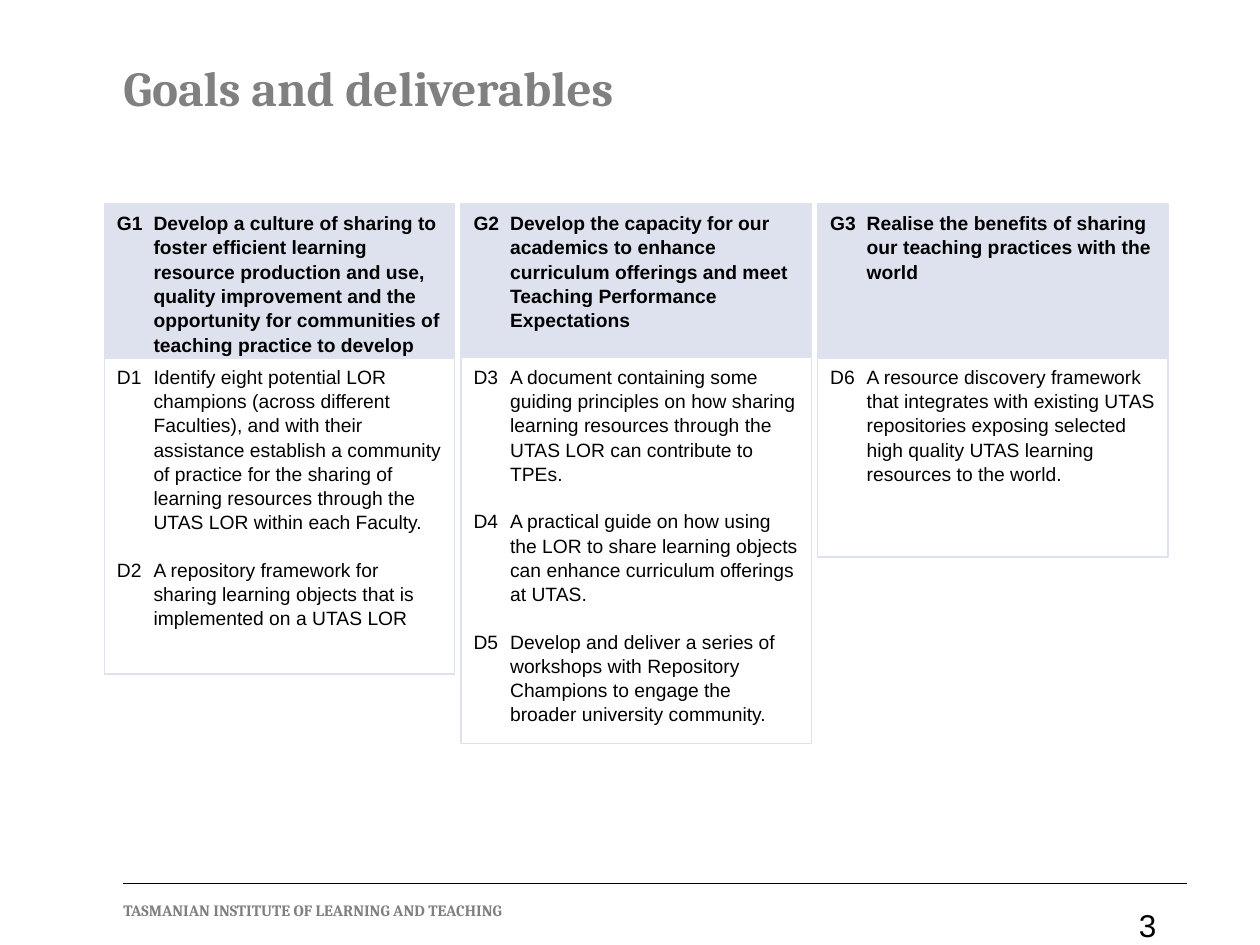
from dataclasses import dataclass

from lxml.etree import SubElement
from pptx import Presentation
from pptx.dml.color import RGBColor
from pptx.enum.shapes import MSO_CONNECTOR, MSO_SHAPE
from pptx.enum.text import MSO_ANCHOR, PP_ALIGN
from pptx.oxml.ns import qn
from pptx.shapes.autoshape import Shape
from pptx.shapes.group import GroupShape
from pptx.slide import Slide
from pptx.text.text import Font, TextFrame
from pptx.util import Inches, Pt

BLACK, GREY, LAVENDER = "000000", "808080", "DEE1EE"
COLUMN_LEFT, COLUMN_PITCH, COLUMN_WIDTH = 0.83, 2.83, 2.78
GOAL_TOP, GOAL_HEIGHT, DELIVERABLES_TOP = 1.62, 1.21, 2.84
HANGING_INDENT = 0.29


@dataclass(frozen=True)
class Item:
    code: str
    wording: str


@dataclass(frozen=True)
class Column:
    goal: Item
    deliverables: tuple[Item, ...]
    deliverables_height: float


COLUMNS = (
    Column(
        Item("G1", "Develop a culture of sharing to foster efficient learning resource production and use, "
             "quality improvement and the opportunity for communities of teaching practice to develop"),
        (
            Item("D1", "Identify eight potential LOR champions (across different Faculties), and with their "
                 "assistance establish a community of practice for the sharing of learning resources "
                 "through the UTAS LOR within each Faculty."),
            Item("D2", "A repository framework for sharing learning objects that is implemented on a UTAS LOR"),
        ),
        2.51,
    ),
    Column(
        Item("G2", "Develop the capacity for our academics to enhance curriculum offerings and meet "
             "Teaching Performance Expectations"),
        (
            Item("D3", "A document containing some guiding principles on how sharing learning resources "
                 "through the UTAS LOR can contribute to TPEs."),
            Item("D4", "A practical guide on how using the LOR to share learning objects can enhance "
                 "curriculum offerings at UTAS."),
            Item("D5", "Develop and deliver a series of workshops with Repository Champions to engage the "
                 "broader university community."),
        ),
        3.06,
    ),
    Column(
        Item("G3", "Realise the benefits of sharing our teaching practices with the world"),
        (
            Item("D6", "A resource discovery framework that integrates with existing UTAS repositories "
                 "exposing selected high quality UTAS learning resources to the world."),
        ),
        1.58,
    ),
)


def rgb(value: str) -> RGBColor:
    return RGBColor.from_string(value)


def set_font(font: Font, name: str, size: float, color: str, bold: bool = False) -> None:
    font.name = name
    font.size = Pt(size)
    font.bold = bold
    font.color.rgb = rgb(color)


def clear_margins(frame: TextFrame) -> None:
    frame.margin_left = frame.margin_right = frame.margin_top = frame.margin_bottom = 0


def place(shape: Shape, left: float, top: float, width: float, height: float) -> None:
    shape.left, shape.top = Inches(left), Inches(top)
    shape.width, shape.height = Inches(width), Inches(height)


def add_title(slide: Slide) -> None:
    title = slide.shapes.title
    place(title, 0.98, 0.59, 7.01, 0.79)
    frame = title.text_frame
    clear_margins(frame)
    frame.vertical_anchor = MSO_ANCHOR.TOP
    frame.text = "Goals and deliverables"
    heading = frame.paragraphs[0]
    heading.alignment = PP_ALIGN.LEFT
    heading.line_spacing = Pt(24)
    set_font(heading.font, "Cambria", 28, GREY, True)


def add_footer(slide: Slide) -> None:
    rule = slide.shapes.add_connector(
        MSO_CONNECTOR.STRAIGHT, Inches(0.98), Inches(7.01), Inches(9.42), Inches(7.01)
    )
    rule.line.color.rgb = rgb(BLACK)
    rule.line.width = Pt(0.5)
    SubElement(rule._element.spPr, qn("a:effectLst"))

    institute = slide.shapes.add_textbox(Inches(0.98), Inches(7.15), Inches(7.76), Inches(0.21)).text_frame
    institute.word_wrap = True
    clear_margins(institute)
    institute.text = "TASMANIAN INSTITUTE OF LEARNING AND TEACHING"
    set_font(institute.paragraphs[0].font, "Cambria", 9, GREY, True)

    page_number = slide.shapes.add_textbox(Inches(8.94), Inches(7.14), Inches(0.47), Inches(0.22)).text_frame
    page_number.word_wrap = True
    page_number.text = "3"
    set_font(page_number.paragraphs[0].font, "Arial", 18, BLACK)


def add_panel(group: GroupShape, items: tuple[Item, ...], left: float, top: float,
              height: float, is_goal: bool) -> None:
    panel = group.shapes.add_shape(
        MSO_SHAPE.RECTANGLE, Inches(left), Inches(top), Inches(COLUMN_WIDTH), Inches(height)
    )
    panel.shadow.inherit = False
    if is_goal:
        panel.fill.solid()
        panel.fill.fore_color.rgb = rgb(LAVENDER)
    else:
        panel.fill.background()
    panel.line.color.rgb = rgb(LAVENDER)
    panel.line.width = Pt(0.75)
    frame = panel.text_frame
    frame.word_wrap = True
    frame.vertical_anchor = MSO_ANCHOR.TOP
    for index, item in enumerate(items):
        entry = frame.add_paragraph() if index else frame.paragraphs[0]
        entry.text = f"{item.code}\t{item.wording}"
        entry.alignment = PP_ALIGN.LEFT
        entry.line_spacing = 1.05
        if index:
            entry.space_before = Pt(13.25)
        properties = entry._p.get_or_add_pPr()
        properties.set("marL", str(Inches(HANGING_INDENT)))
        properties.set("indent", str(-Inches(HANGING_INDENT)))
        set_font(entry.font, "Arial", 11, BLACK, is_goal)


def add_column(slide: Slide, column: Column, left: float) -> None:
    group = slide.shapes.add_group_shape()
    add_panel(group, (column.goal,), left, GOAL_TOP, GOAL_HEIGHT, True)
    add_panel(group, column.deliverables, left, DELIVERABLES_TOP, column.deliverables_height, False)


def main() -> None:
    presentation = Presentation()
    presentation.slide_width, presentation.slide_height = Inches(10), Inches(7.5)
    slide = presentation.slides.add_slide(presentation.slide_layouts[5])
    add_title(slide)
    add_footer(slide)
    for index, column in enumerate(COLUMNS):
        add_column(slide, column, COLUMN_LEFT + index * COLUMN_PITCH)
    presentation.save("out.pptx")


if __name__ == "__main__":
    main()
